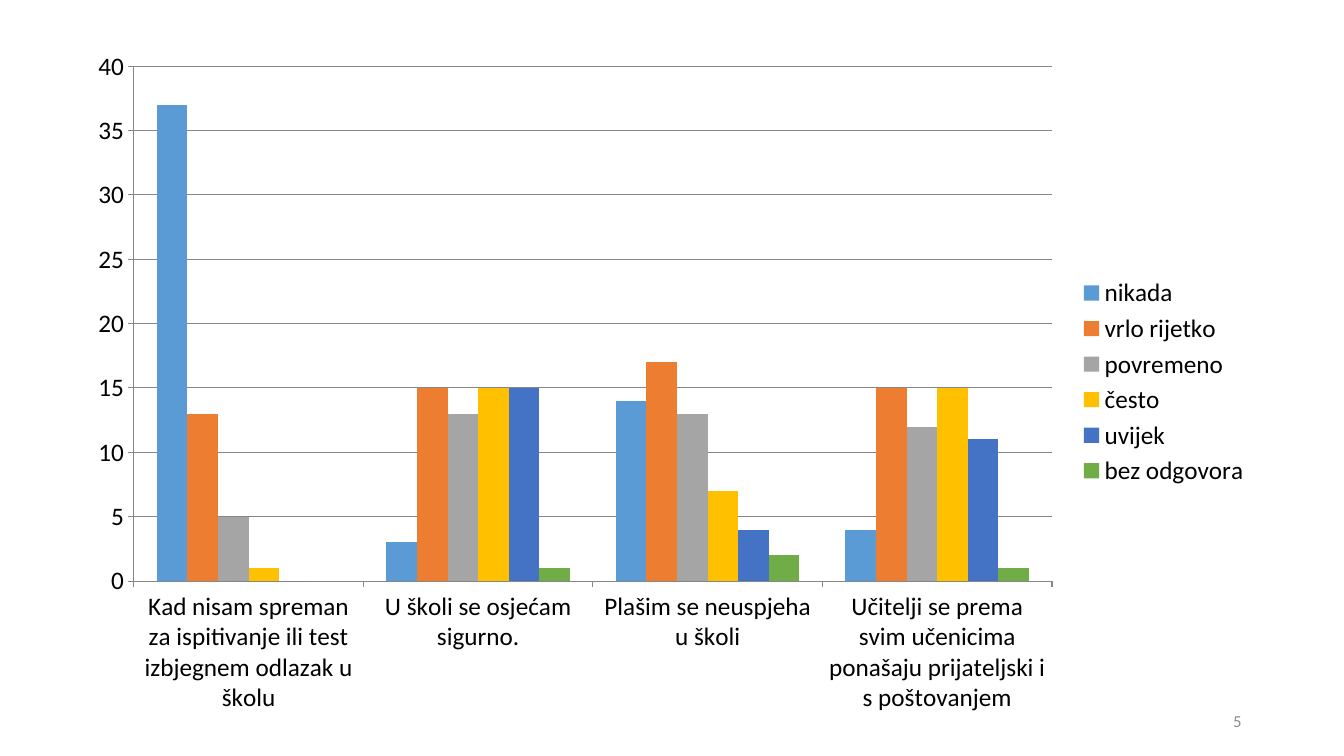
"""Build a slide with a clustered column chart of pupils' survey answers."""
from dataclasses import dataclass

from pptx import Presentation
from pptx.chart.chart import Chart
from pptx.chart.data import CategoryChartData
from pptx.dml.color import RGBColor
from pptx.dml.fill import FillFormat
from pptx.enum.chart import XL_CHART_TYPE, XL_LEGEND_POSITION, XL_TICK_MARK
from pptx.enum.text import MSO_ANCHOR, PP_ALIGN
from pptx.slide import Slide
from pptx.text.text import Font
from pptx.util import Pt

COLUMNS = XL_CHART_TYPE.COLUMN_CLUSTERED
LEGEND_RIGHT = XL_LEGEND_POSITION.RIGHT
TICK_OUTSIDE = XL_TICK_MARK.OUTSIDE
MIDDLE = MSO_ANCHOR.MIDDLE
ALIGN_RIGHT = PP_ALIGN.RIGHT

FONT_NAME = "Calibri"
BLACK = "000000"
GRAY = "8C8C8C"
AXIS_GRAY = "868686"
BLANK_LAYOUT = 6


@dataclass(frozen=True)
class Answer:
    name: str
    counts: tuple[int, ...]
    color: str


STATEMENTS = (
    "Kad nisam spreman za ispitivanje ili test izbjegnem odlazak u školu",
    "U školi se osjećam sigurno.",
    "Plašim se neuspjeha u školi",
    "Učitelji se prema svim učenicima ponašaju prijateljski i s poštovanjem",
)
ANSWERS = (
    Answer("nikada", (37, 3, 14, 4), "5B9BD5"),
    Answer("vrlo rijetko", (13, 15, 17, 15), "ED7D31"),
    Answer("povremeno", (5, 13, 13, 12), "A5A5A5"),
    Answer("često", (1, 15, 7, 15), "FFC000"),
    Answer("uvijek", (0, 15, 4, 11), "4472C4"),
    Answer("bez odgovora", (0, 1, 2, 1), "70AD47"),
)


def paint(fill: FillFormat, color: str) -> None:
    fill.solid()
    fill.fore_color.rgb = RGBColor.from_string(color)


def set_font(font: Font, size: float, color: str) -> None:
    font.name = FONT_NAME
    font.size = Pt(size)
    paint(font.fill, color)


def format_axes(chart: Chart) -> None:
    value_axis = chart.value_axis
    value_axis.minimum_scale = 0
    value_axis.maximum_scale = 40
    value_axis.major_unit = 5
    value_axis.has_major_gridlines = True
    for axis in (chart.category_axis, value_axis):
        axis.major_tick_mark = TICK_OUTSIDE
    for part in (chart.category_axis, value_axis, value_axis.major_gridlines):
        part.format.line.width = Pt(0.75)
        paint(part.format.line.fill, AXIS_GRAY)


def add_answer_chart(page: Slide) -> None:
    data = CategoryChartData()
    data.categories = STATEMENTS
    for answer in ANSWERS:
        data.add_series(answer.name, answer.counts)
    frame = page.shapes.add_chart(
        COLUMNS, Pt(53.3), Pt(26.6), Pt(846.7), Pt(492.5), data
    )
    chart = frame.chart
    chart.has_title = False
    set_font(chart.font, 18, BLACK)
    chart.has_legend = True
    chart.legend.position = LEGEND_RIGHT
    chart.legend.include_in_layout = False
    plot = chart.plots[0]
    plot.gap_width = 150
    plot.overlap = 0
    plot.vary_by_categories = False
    for series, answer in zip(plot.series, ANSWERS):
        paint(series.format.fill, answer.color)
    format_axes(chart)


def add_page_number(page: Slide, number: str) -> None:
    box = page.shapes.add_textbox(Pt(678), Pt(500.5), Pt(216), Pt(28.75))
    box.text_frame.word_wrap = True
    box.text_frame.vertical_anchor = MIDDLE
    para = box.text_frame.paragraphs[0]
    para.text = number
    para.alignment = ALIGN_RIGHT
    set_font(para.font, 12, GRAY)


def main() -> None:
    deck = Presentation()
    deck.slide_width, deck.slide_height = Pt(960), Pt(540)
    page = deck.slides.add_slide(deck.slide_layouts[BLANK_LAYOUT])
    add_answer_chart(page)
    add_page_number(page, "5")
    deck.save("out.pptx")


if __name__ == "__main__":
    main()
